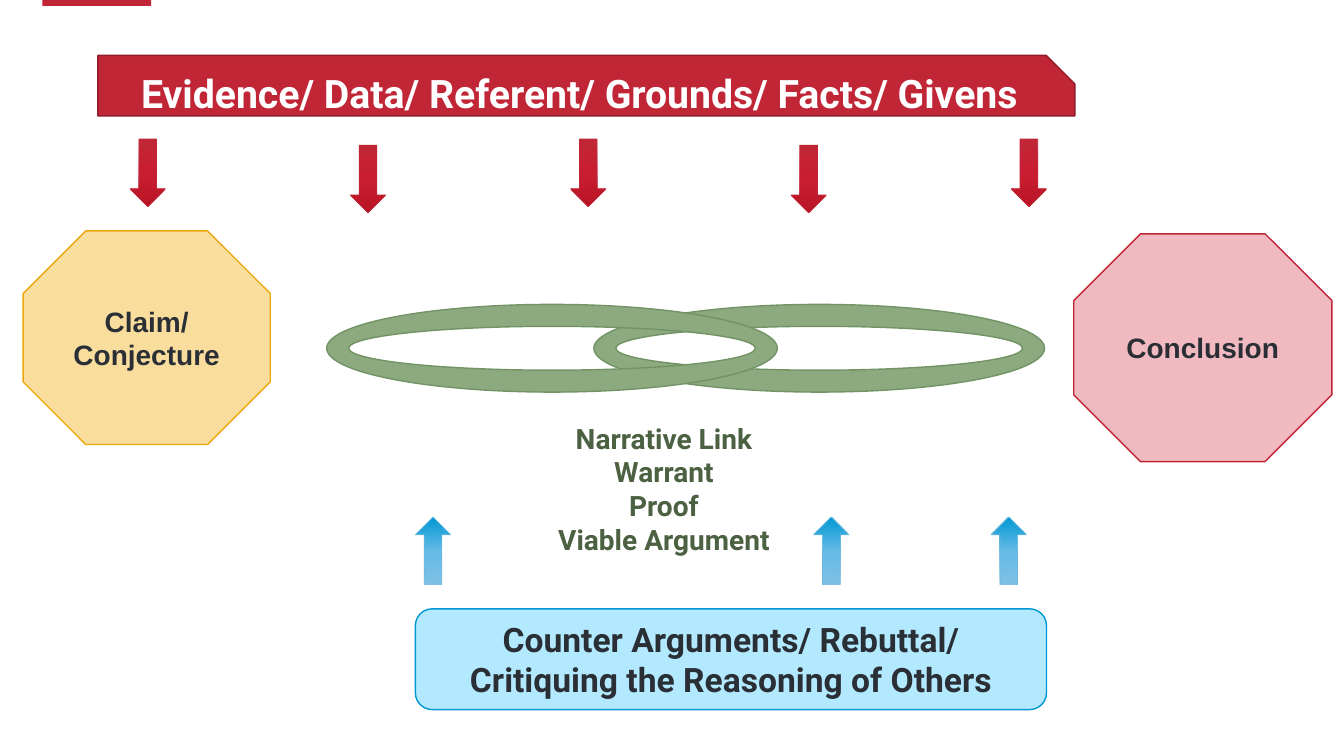
"""Build a slide showing how evidence, claim, warrant, rebuttal and conclusion fit together."""
from copy import deepcopy
from dataclasses import dataclass

from pptx import Presentation
from pptx.dml.color import RGBColor
from pptx.enum.shapes import MSO_SHAPE as Shape
from pptx.enum.text import MSO_ANCHOR as Anchor, MSO_AUTO_SIZE as AutoSize, PP_ALIGN as Align
from pptx.oxml.ns import qn
from pptx.util import Inches, Pt


@dataclass(frozen=True)
class Theme:
    red: str = "C12637"
    dark_red: str = "8F1C29"
    pink: str = "F1B9C0"
    yellow: str = "F9DD9D"
    gold: str = "EBA70E"
    green: str = "8CA97F"
    green_edge: str = "729364"
    green_text: str = "4B6141"
    pale_blue: str = "B3E9FF"
    blue: str = "0098D3"
    blue_edge: str = "6BB8E0"
    ink: str = "2A2F36"
    white: str = "FFFFFF"
    red_fade: tuple = ("C12637", "C91E31", "B91426")
    blue_fade: tuple = ("7EC0E5", "65BAE6", "0098D3")
    heading_font: str = "Roboto"
    label_font: str = "Arial"
    banner_size: int = 28
    counter_size: int = 24
    label_size: int = 20


THEME = Theme()

EVIDENCE = ["Evidence/ Data/ Referent/ Grounds/ Facts/ Givens"]
CLAIM = ["Claim/", "Conjecture"]
CONCLUSION = ["Conclusion"]
WARRANT = ["Narrative Link", "Warrant", "Proof", "Viable Argument"]
COUNTER = ["Counter Arguments/ Rebuttal/", "Critiquing the Reasoning of Others"]

EVIDENCE_ARROWS = 5
EVIDENCE_ARROW_LEFT, EVIDENCE_ARROW_STEP = 1.29, 2.185
EVIDENCE_ARROW_TOPS = (1.38, 1.44)
COUNTER_ARROW_LEFTS = (4.12, 8.07, 9.83)
COUNTER_ARROW_TOP = 5.13
ARROW_SIZE = (0.35, 0.67)
LINK_LEFTS = (5.89, 3.24)


def write(frame, lines, font_name, size, color):
    frame.word_wrap = True
    frame.text = "\n".join(lines)
    for paragraph in frame.paragraphs:
        paragraph.alignment = Align.CENTER
        font = paragraph.font
        font.name, font.size, font.bold = font_name, Pt(size), True
        font.color.rgb = RGBColor.from_string(color)


def add_block(slide, kind, box, fill, edge=None, edge_width=1):
    block = slide.shapes.add_shape(kind, *map(Inches, box))
    block.shadow.inherit = False
    block.fill.solid()
    block.fill.fore_color.rgb = RGBColor.from_string(fill)
    if edge:
        block.line.color.rgb = RGBColor.from_string(edge)
        block.line.width = Pt(edge_width)
    else:
        block.line.fill.background()
    return block


def add_label(slide, kind, box, fill, edge, lines, font_name, size, color):
    label = add_block(slide, kind, box, fill, edge)
    label.text_frame.vertical_anchor = Anchor.MIDDLE
    write(label.text_frame, lines, font_name, size, color)
    return label


def add_arrow(slide, left, top, fade, edge, rotation=0):
    arrow = add_block(slide, Shape.DOWN_ARROW, (left, top, *ARROW_SIZE), fade[0], edge, 0.5)
    arrow.rotation = rotation
    arrow.fill.gradient()
    arrow.fill.gradient_angle = 270
    stop_list = next(arrow.element.iter(qn("a:gsLst")))
    stop_list.insert(1, deepcopy(stop_list[0]))
    for stop, position, color in zip(arrow.fill.gradient_stops, (0, 0.5, 1), fade):
        stop.position = position
        stop.color.rgb = RGBColor.from_string(color)


def main():
    deck = Presentation()
    deck.slide_width, deck.slide_height = Inches(13.33), Inches(7.5)
    slide = deck.slides.add_slide(deck.slide_layouts[6])

    add_block(slide, Shape.RECTANGLE, (0.42, 0, 1.08, 0.06), THEME.red)
    add_label(slide, Shape.OCTAGON, (10.65, 2.32, 2.56, 2.26), THEME.pink, THEME.red,
              CONCLUSION, THEME.label_font, THEME.label_size, THEME.ink)
    banner = add_label(slide, Shape.SNIP_1_RECTANGLE, (0.97, 0.55, 9.69, 0.6), THEME.red,
                       THEME.dark_red, EVIDENCE, THEME.heading_font, THEME.banner_size, THEME.white)
    banner.adjustments[0] = 0.47
    add_label(slide, Shape.OCTAGON, (0.23, 2.29, 2.45, 2.12), THEME.yellow, THEME.gold,
              CLAIM, THEME.label_font, THEME.label_size, THEME.ink)

    for left in LINK_LEFTS:
        add_block(slide, Shape.DONUT, (left, 3.02, 4.47, 0.87), THEME.green, THEME.green_edge)
    warrant = slide.shapes.add_textbox(*map(Inches, (5.29, 4.13, 2.59, 1.45))).text_frame
    write(warrant, WARRANT, THEME.heading_font, THEME.label_size, THEME.green_text)
    warrant.auto_size = AutoSize.SHAPE_TO_FIT_TEXT

    for index in range(EVIDENCE_ARROWS):
        add_arrow(slide, EVIDENCE_ARROW_LEFT + index * EVIDENCE_ARROW_STEP,
                  EVIDENCE_ARROW_TOPS[index % 2], THEME.red_fade, THEME.red)

    add_label(slide, Shape.ROUNDED_RECTANGLE, (4.12, 6.04, 6.26, 1), THEME.pale_blue, THEME.blue,
              COUNTER, THEME.heading_font, THEME.counter_size, THEME.ink)
    for left in COUNTER_ARROW_LEFTS:
        add_arrow(slide, left, COUNTER_ARROW_TOP, THEME.blue_fade, THEME.blue_edge, 180)

    deck.save("out.pptx")


if __name__ == "__main__":
    main()
